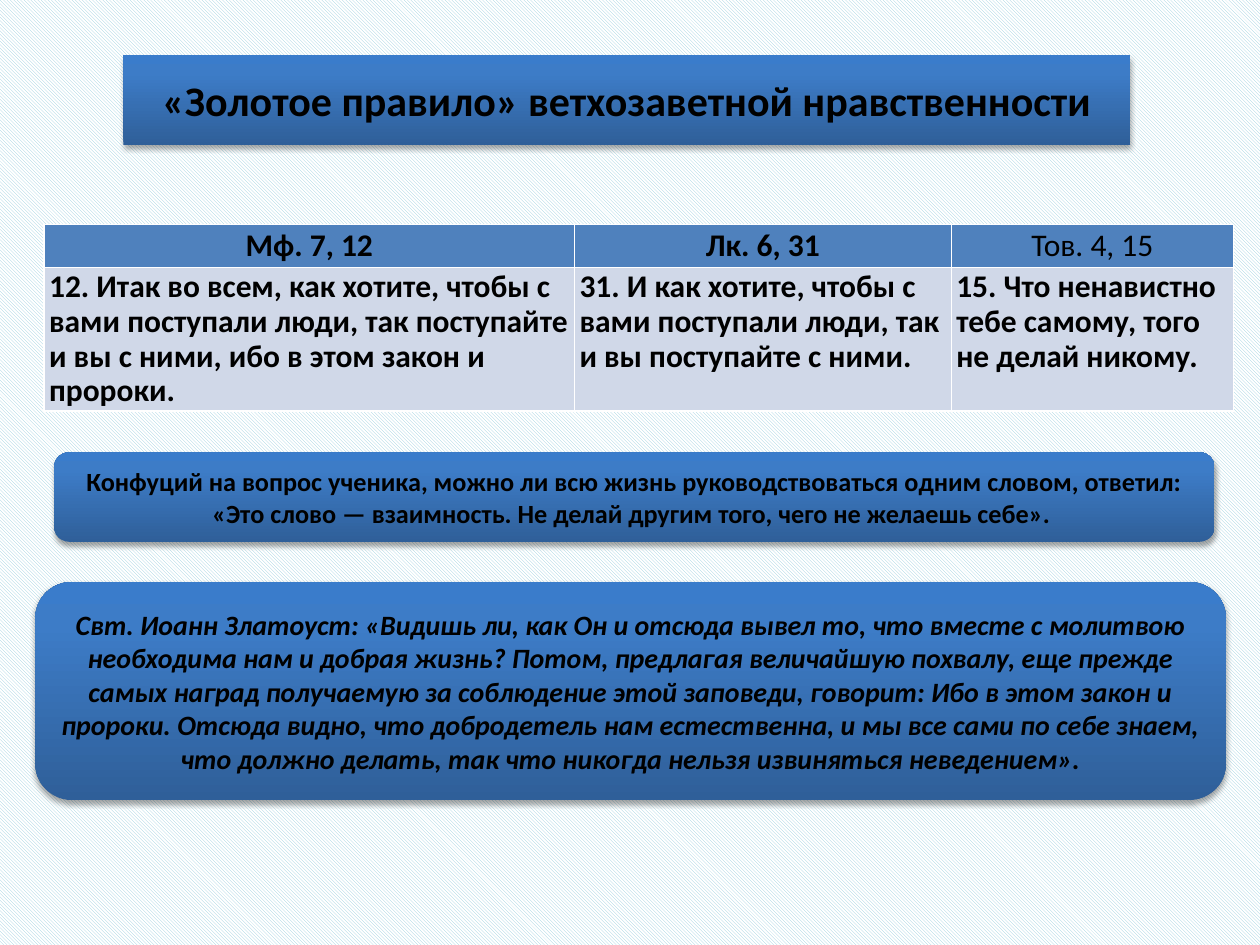
from typing import NamedTuple

from lxml import etree
from pptx import Presentation
from pptx import util as u
from pptx.dml.color import RGBColor
from pptx.enum import dml, shapes, text
from pptx.oxml import parse_xml
from pptx.oxml.ns import nsdecls, qn

FONT = "Calibri"
BLACK = RGBColor(0x00, 0x00, 0x00)
WHITE = RGBColor(0xFF, 0xFF, 0xFF)
AQUA = RGBColor(0x93, 0xCD, 0xDD)
HEADER_BLUE = RGBColor(0x4F, 0x81, 0xBD)
CELL_BLUE = RGBColor(0xD0, 0xD8, 0xE8)
GRADIENT = [(0, RGBColor(0x2F, 0x5F, 0x99)),
            (80, RGBColor(0x3D, 0x7C, 0xC7)),
            (100, RGBColor(0x3A, 0x7C, 0xCB))]


class Panel(NamedTuple):
    left: float
    top: float
    width: float
    height: float
    size: int
    words: str
    italic: bool = False


class Verse(NamedTuple):
    width: float
    source: str
    words: str
    bold_source: bool = True


TITLE = Panel(0.98, 0.44, 7.99, 0.71, 24,
              "«Золотое правило» ветхозаветной нравственности")
QUOTES = [
    Panel(0.43, 3.59, 9.21, 0.71, 15,
          "Конфуций на вопрос ученика, можно ли всю жизнь руководствоваться "
          "одним словом, ответил: «Это слово — взаимность. Не делай другим "
          "того, чего не желаешь себе». "),
    Panel(0.28, 4.62, 9.45, 1.73, 16,
          "Свт. Иоанн Златоуст: «Видишь ли, как Он и отсюда вывел то, что "
          "вместе с молитвою необходима нам и добрая жизнь? Потом, предлагая "
          "величайшую похвалу, еще прежде самых наград получаемую за "
          "соблюдение этой заповеди, говорит: Ибо в этом закон и пророки. "
          "Отсюда видно, что добродетель нам естественна, и мы все сами по "
          "себе знаем, что должно делать, так что никогда нельзя извиняться "
          "неведением».", italic=True),
]
VERSES = [
    Verse(4.21, "Мф. 7, 12",
          "12. Итак во всем, как хотите, чтобы с вами поступали люди, так "
          "поступайте и вы с ними, ибо в этом закон и пророки."),
    Verse(2.99, "Лк. 6, 31",
          "31. И как хотите, чтобы с вами поступали люди, так и вы "
          "поступайте с ними."),
    Verse(2.24, "Тов. 4, 15",
          "15. Что ненавистно тебе самому, того не делай никому.",
          bold_source=False),
]
ROW_HEIGHTS = [0.33, 1.13]


def format_text(p, size: int, bold: bool = True, italic: bool = False) -> None:
    for r in p.runs:
        r.font.name = FONT
        r.font.size = u.Pt(size)
        r.font.bold = bold
        r.font.italic = italic
        r.font.color.rgb = BLACK


def style_panel(sp, panel: Panel) -> None:
    """Gradient fill, soft shadow and centred black text."""
    spPr = sp._element.spPr
    stops = "".join(f'<a:gs pos="{pos * 1000}"><a:srgbClr val="{color}"/></a:gs>'
                    for pos, color in GRADIENT)
    spPr.append(parse_xml(
        f'<a:gradFill {nsdecls("a")} rotWithShape="1"><a:gsLst>{stops}</a:gsLst>'
        f'<a:lin ang="{270 * 60000}" scaled="0"/></a:gradFill>'))
    sp.line.fill.background()
    spPr.append(parse_xml(
        f'<a:effectLst {nsdecls("a")}><a:outerShdw blurRad="{u.Pt(3.1)}" '
        f'dist="{u.Pt(1.8)}" dir="{90 * 60000}" rotWithShape="0">'
        f'<a:srgbClr val="{BLACK}"><a:alpha val="35000"/></a:srgbClr>'
        f'</a:outerShdw></a:effectLst>'))
    tf = sp.text_frame
    tf.word_wrap = True
    tf.auto_size = text.MSO_AUTO_SIZE.NONE
    tf.vertical_anchor = text.MSO_ANCHOR.MIDDLE
    tf.text = panel.words
    p = tf.paragraphs[0]
    p.alignment = text.PP_ALIGN.CENTER
    format_text(p, panel.size, italic=panel.italic)


def add_title(slide, panel: Panel) -> None:
    sp = slide.shapes.title
    sp.left, sp.top = u.Inches(panel.left), u.Inches(panel.top)
    sp.width, sp.height = u.Inches(panel.width), u.Inches(panel.height)
    sp._element.spPr.append(parse_xml(
        f'<a:prstGeom {nsdecls("a")} prst="roundRect"><a:avLst/></a:prstGeom>'))
    style_panel(sp, panel)


def add_quote(slide, panel: Panel) -> None:
    sp = slide.shapes.add_shape(
        shapes.MSO_SHAPE.ROUNDED_RECTANGLE,
        u.Inches(panel.left), u.Inches(panel.top),
        u.Inches(panel.width), u.Inches(panel.height))
    style_panel(sp, panel)


def fill_cell(cell, words: str, color: RGBColor, bold: bool):
    cell.margin_left = cell.margin_right = u.Inches(0.04)
    cell.margin_top = cell.margin_bottom = u.Inches(0.02)
    # Borders come before the fill in the cell properties
    tcPr = cell._tc.get_or_add_tcPr()
    for side in ("a:lnL", "a:lnR", "a:lnT", "a:lnB"):
        ln = etree.SubElement(tcPr, qn(side), w=str(u.Pt(1)))
        solid = etree.SubElement(ln, qn("a:solidFill"))
        etree.SubElement(solid, qn("a:srgbClr"), val=str(WHITE))
    cell.fill.solid()
    cell.fill.fore_color.rgb = color
    cell.text_frame.text = words
    p = cell.text_frame.paragraphs[0]
    format_text(p, 18, bold)
    return p


def add_verses(slide) -> None:
    table = slide.shapes.add_table(
        len(ROW_HEIGHTS), len(VERSES), u.Inches(0.35), u.Inches(1.78),
        u.Inches(sum(v.width for v in VERSES)),
        u.Inches(sum(ROW_HEIGHTS))).table
    for row, height in zip(table.rows, ROW_HEIGHTS):
        row.height = u.Inches(height)
    for i, verse in enumerate(VERSES):
        table.columns[i].width = u.Inches(verse.width)
        p = fill_cell(table.cell(0, i), verse.source, HEADER_BLUE, verse.bold_source)
        p.alignment = text.PP_ALIGN.CENTER
        p = fill_cell(table.cell(1, i), verse.words, CELL_BLUE, True)
        p.line_spacing = 0.9


def main() -> None:
    prs = Presentation()
    prs.slide_width, prs.slide_height = u.Inches(10), u.Inches(7.5)
    slide = prs.slides.add_slide(prs.slide_layouts[5])

    # Hatched background
    fill = slide.background.fill
    fill.patterned()
    fill.pattern = dml.MSO_PATTERN.DARK_DOWNWARD_DIAGONAL
    fill.fore_color.rgb = AQUA
    fill.back_color.rgb = WHITE

    # Title, table of verses, quotations
    add_title(slide, TITLE)
    add_verses(slide)
    for quote in QUOTES:
        add_quote(slide, quote)

    prs.save("out.pptx")


if __name__ == "__main__":
    main()
